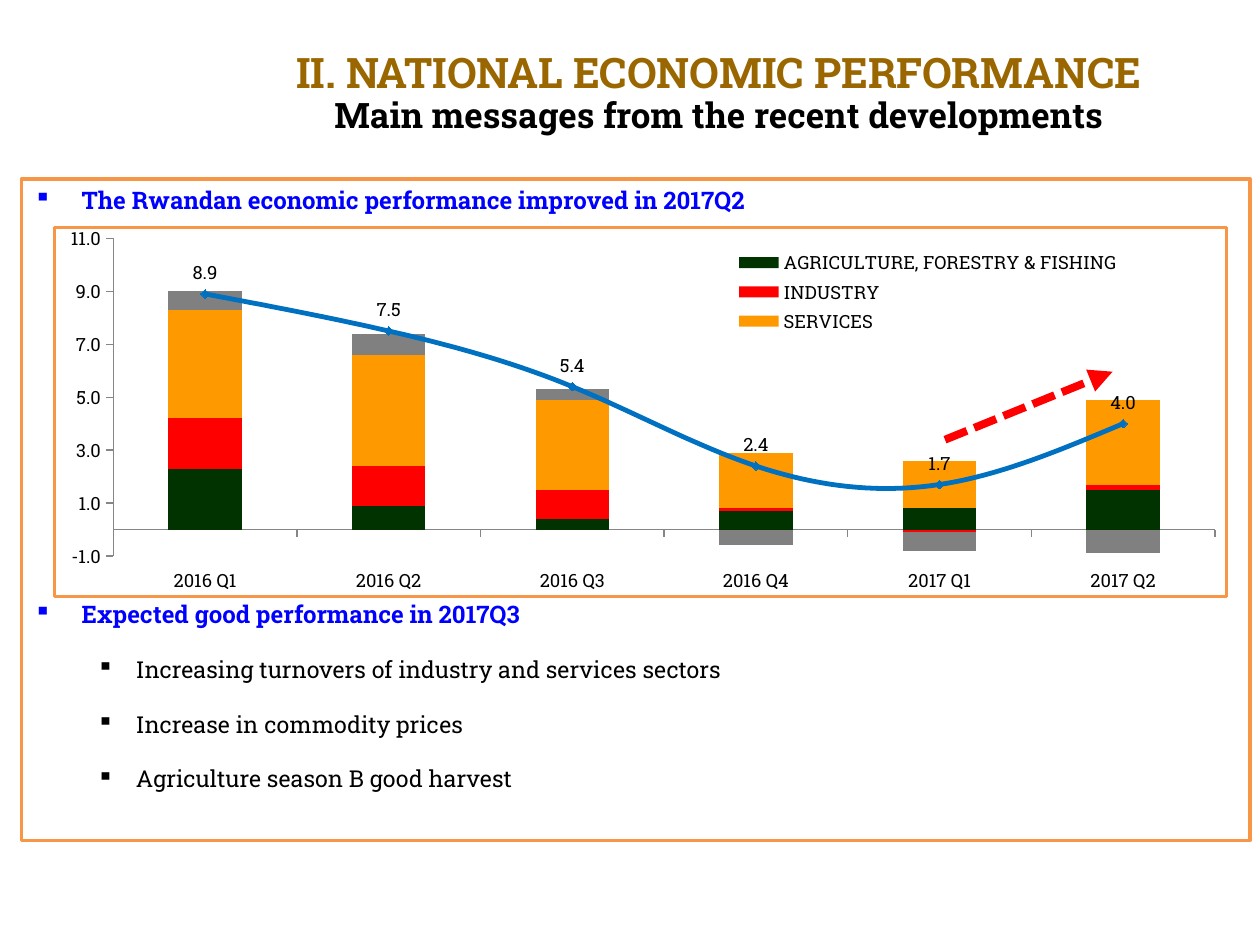
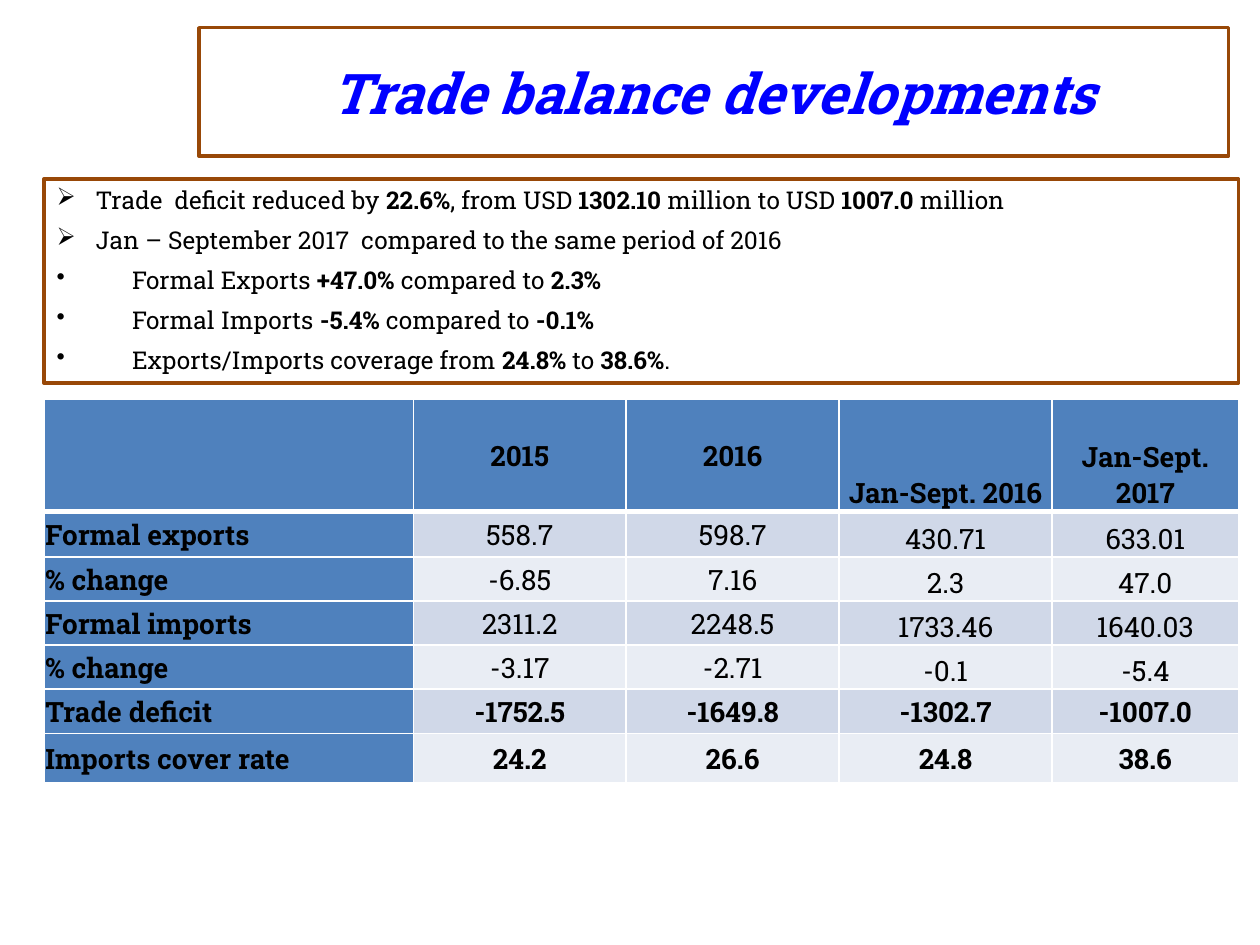
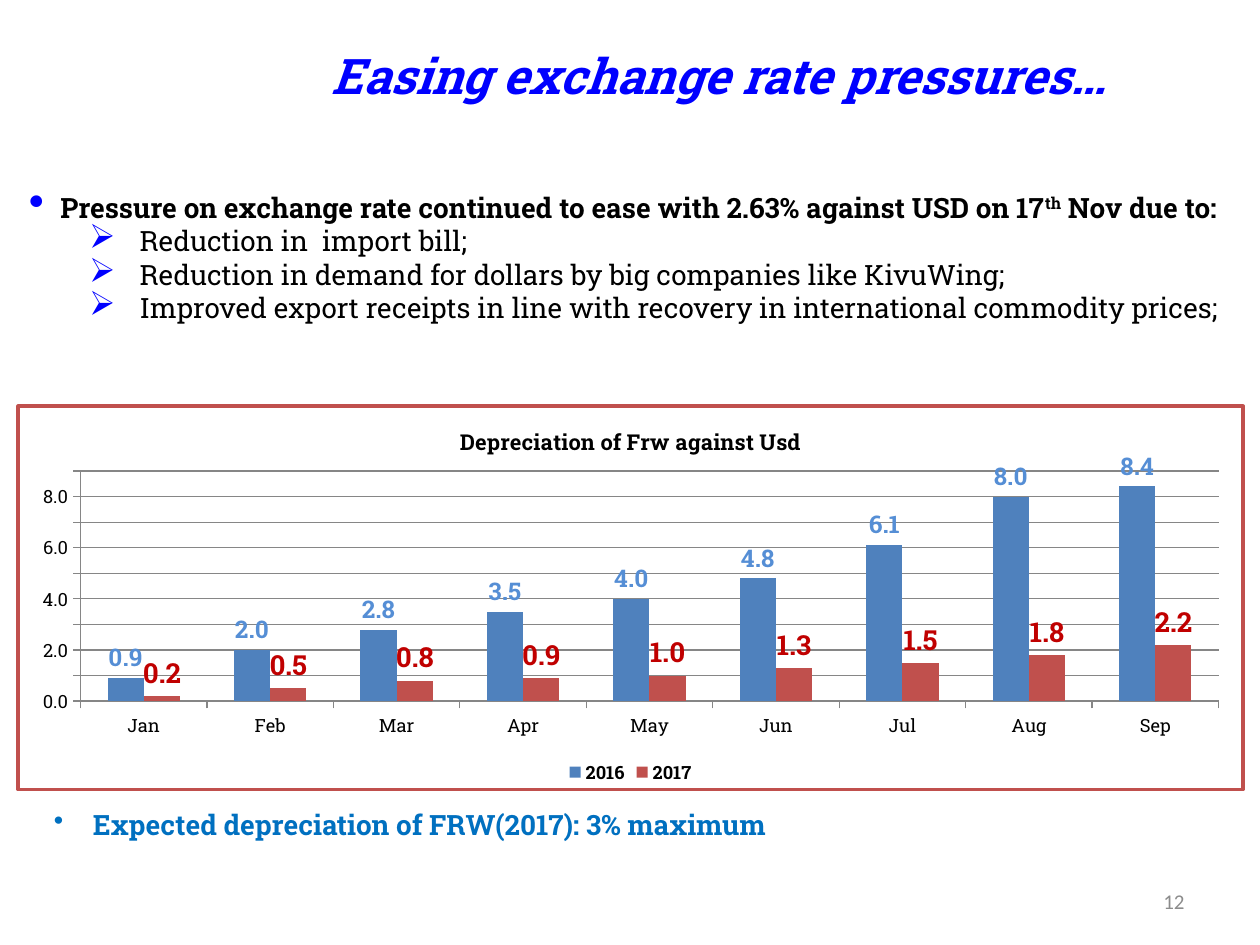
from pptx import Presentation
from pptx.chart.data import CategoryChartData as ChartData
from pptx.dml.color import RGBColor as RGB
from pptx.enum.chart import XL_CHART_TYPE as KIND, XL_LABEL_POSITION as LABEL
from pptx.enum.chart import XL_LEGEND_POSITION as LEGEND, XL_MARKER_STYLE as MARK
from pptx.enum.chart import XL_TICK_LABEL_POSITION as TICKS, XL_TICK_MARK as TICK
from pptx.enum.dml import MSO_LINE as DASH
from pptx.enum.shapes import MSO_CONNECTOR as LINK
from pptx.enum.text import MSO_ANCHOR as ANCHOR, PP_ALIGN as ALIGN
from pptx.oxml import parse_xml
from pptx.oxml.ns import nsdecls, qn
from pptx.util import Inches, Pt
from lxml.etree import SubElement

SLAB = "Roboto Slab"
BLACK, WHITE = RGB(0, 0, 0), RGB(255, 255, 255)
BLUE, SKY, PALE = RGB(0, 0, 255), RGB(0, 0x70, 0xC0), RGB(0x55, 0x8E, 0xD5)
NAVY, STEEL = RGB(0, 0x20, 0x60), RGB(0x4F, 0x81, 0xBD)
BAND, MIST = RGB(0xD0, 0xD8, 0xE8), RGB(0xE9, 0xED, 0xF4)
GOLD, BROWN = RGB(0x99, 0x66, 0), RGB(0x98, 0x48, 0x07)
PEACH, ORANGE = RGB(0xF7, 0x96, 0x46), RGB(0xFF, 0x99, 0)
GREEN, RED = RGB(0, 0x33, 0), RGB(255, 0, 0)
BRICK, CRIMSON = RGB(0xC0, 0x50, 0x4D), RGB(0xC0, 0, 0)
GRAY, AXIS, NUMBER = RGB(0x80, 0x80, 0x80), RGB(0x86, 0x86, 0x86), RGB(0x8C, 0x8C, 0x8C)


# Shared text parts

def style(font, size, color=BLACK, bold=False, italic=False, name=SLAB):
    font.name, font.size, font.bold, font.italic = name, Pt(size), bold, italic
    font.color.rgb = color


def frame(slide, box, fill=None, edge=None, anchor=ANCHOR.TOP):
    """Text box at (left, top, width, height) in inches."""
    shape = slide.shapes.add_textbox(*map(Inches, box))
    if fill is not None:
        shape.fill.solid()
        shape.fill.fore_color.rgb = fill
    if edge is not None:
        shape.line.color.rgb, shape.line.width = edge, Pt(2)
    text = shape.text_frame
    text.word_wrap, text.vertical_anchor = True, anchor
    return text


def bullet(para, char, left, hang, color=None, scale=None):
    props = para._p.get_or_add_pPr()
    props.set("marL", str(Inches(left)))
    props.set("indent", str(-Inches(hang)))
    if color is not None:
        tint = SubElement(props, qn("a:buClr"))
        SubElement(tint, qn("a:srgbClr")).set("val", str(color))
    if scale:
        SubElement(props, qn("a:buSzPct")).set("val", str(scale * 1000))
    SubElement(props, qn("a:buChar")).set("char", char)


def write(text, words, size, color=BLACK, bold=False, italic=False, align=None,
          before=0, after=0, lines=None, mark=None, raised=False, name=SLAB):
    """Add a paragraph; parts between asterisks are bold, or raised."""
    first = text.paragraphs[0]
    para = text.add_paragraph() if first.runs else first
    if mark:
        bullet(para, *mark)
    para.alignment, para.line_spacing = align, lines
    para.space_before, para.space_after = Pt(before), Pt(after)
    style(para.font, size, color, bold, italic, name)
    for i, part in enumerate(words.split("*")):
        run = para.add_run()
        run.text = part
        if i % 2 and raised:
            run._r.get_or_add_rPr().set("baseline", "30000")
        elif i % 2:
            run.font.bold = True


def title(slide, top, height, words, size, color=BLUE, italic=True,
          width=8.25, edge=None):
    text = frame(slide, (1.58, top, width, height), edge=edge, anchor=ANCHOR.MIDDLE)
    write(text, words, size, color, True, italic, ALIGN.CENTER)


# Shared chart parts

def plot(slide, box, kind, cats, rows, edge, form):
    data = ChartData()
    data.categories = cats
    for name, vals, _ in rows:
        data.add_series(name, vals)
    chart = slide.shapes.add_chart(kind, *map(Inches, box), data).chart
    style(chart.font, 10.5)
    chart.element.find(qn("c:chart")).addnext(parse_xml(
        f'<c:spPr {nsdecls("c", "a")}><a:solidFill><a:srgbClr val="{WHITE}"/></a:solidFill>'
        f'<a:ln w="{Pt(2)}"><a:solidFill><a:srgbClr val="{edge}"/></a:solidFill></a:ln>'
        '</c:spPr>'))
    chart.has_title = False
    chart.has_legend = True
    chart.legend.position = LEGEND.BOTTOM
    chart.legend.include_in_layout = False
    bars = chart.plots[0]
    bars.gap_width, bars.vary_by_categories = 150, False
    for series, (_, _, color) in zip(bars.series, rows):
        series.format.fill.solid()
        series.format.fill.fore_color.rgb = color
        series.invert_if_negative = False
    for axis in (chart.category_axis, chart.value_axis):
        axis.major_tick_mark, axis.minor_tick_mark = TICK.OUTSIDE, TICK.NONE
        axis.format.line.color.rgb = AXIS
    ticks = chart.value_axis.tick_labels
    ticks.number_format, ticks.number_format_is_linked = form, False
    return chart


def label(series, form, place, size, color=BLACK, bold=False):
    tags = series.data_labels
    tags.show_value, tags.position = True, place
    tags.number_format, tags.number_format_is_linked = form, False
    style(tags.font, size, color, bold)


def layout(parent, index, x, y, w, h, inner=False):
    for old in parent.findall(qn("c:layout")):
        parent.remove(old)
    target = '<c:layoutTarget val="inner"/>' if inner else ""
    parent.insert(index, parse_xml(
        f'<c:layout {nsdecls("c")}><c:manualLayout>{target}'
        '<c:xMode val="edge"/><c:yMode val="edge"/>'
        f'<c:x val="{x}"/><c:y val="{y}"/><c:w val="{w}"/><c:h val="{h}"/>'
        '</c:manualLayout></c:layout>'))


# Slide 1: growth

def to_line(chart):
    """Turn the last bar series into a line on the same axes."""
    bars = chart.element.xpath(".//c:barChart")[0]
    last = bars.findall(qn("c:ser"))[-1]
    for flag in last.findall(qn("c:invertIfNegative")):
        last.remove(flag)
    line = parse_xml(f'<c:lineChart {nsdecls("c")}><c:grouping val="standard"/>'
                     '<c:varyColors val="0"/><c:marker val="1"/></c:lineChart>')
    line.insert(2, last)
    for axis in bars.findall(qn("c:axId")):
        SubElement(line, qn("c:axId")).set("val", axis.get("val"))
    bars.addnext(line)
    return chart.plots[1].series[0]


def growth(slide, box):
    cats = ["2016 Q1", "2016 Q2", "2016 Q3", "2016 Q4", "2017 Q1", "2017 Q2"]
    rows = [
        ("AGRICULTURE, FORESTRY & FISHING", (2.3, 0.9, 0.4, 0.7, 0.8, 1.5), GREEN),
        ("INDUSTRY", (1.9, 1.5, 1.1, 0.1, -0.1, 0.2), RED),
        ("SERVICES", (4.1, 4.2, 3.4, 2.1, 1.8, 3.2), ORANGE),
        ("", (0.7, 0.8, 0.4, -0.6, -0.7, -0.9), GRAY),
        ("", (8.9, 7.5, 5.4, 2.4, 1.7, 4), SKY)]
    chart = plot(slide, box, KIND.COLUMN_STACKED, cats, rows, PEACH, "#,##0.0")
    chart.plots[0].overlap = 100
    chart.category_axis.tick_label_position = TICKS.LOW
    axis = chart.value_axis
    axis.has_major_gridlines = False
    axis.minimum_scale, axis.maximum_scale, axis.major_unit = -1, 11, 2

    # Total as a smooth line
    total = to_line(chart)
    total.smooth = True
    total.format.fill.background()
    total.format.line.color.rgb, total.format.line.width = SKY, Pt(2.75)
    total.marker.style, total.marker.size = MARK.DIAMOND, 5
    total.marker.format.fill.solid()
    total.marker.format.fill.fore_color.rgb = NAVY
    label(total, "#,##0.0", LABEL.ABOVE, 10.5)

    # Legend with the three named sectors only
    style(chart.legend.font, 10.5)
    key = chart.element.xpath(".//c:legend")[0]
    for i, item in enumerate((3, 4), 1):
        key.insert(i, parse_xml(f'<c:legendEntry {nsdecls("c")}><c:idx val="{item}"/>'
                                '<c:delete val="1"/></c:legendEntry>'))
    layout(key, 3, 0.56, 0.05, 0.37, 0.25)
    layout(chart.element.xpath(".//c:plotArea")[0], 0, 0.05, 0.03, 0.94, 0.86, True)


def arrow(slide, start, end):
    link = slide.shapes.add_connector(LINK.STRAIGHT, *map(Inches, start + end))
    link.line.color.rgb, link.line.width = RED, Pt(4.5)
    link.line.dash_style = DASH.SQUARE_DOT
    props = link.element.spPr
    SubElement(props.find(qn("a:ln")), qn("a:tailEnd")).set("type", "triangle")
    SubElement(props, qn("a:effectLst"))


def economy(slide):
    title(slide, 0.7, 0.42, "Main messages from the recent developments", 20, BLACK, False)
    body = frame(slide, (0.17, 1.42, 9.75, 5.25), WHITE, PEACH)
    main, sub = ("▪", 0.38, 0.38), ("▪", 0.81, 0.31)
    write(body, "The Rwandan economic performance improved in 2017Q2", 13.8, BLUE, True,
          mark=main)
    write(body, "Expected good performance in 2017Q3", 13.8, BLUE, True, before=220,
          mark=main)
    for words in ("Increasing turnovers of industry and services sectors",
                  "Increase in commodity prices",
                  "Agriculture season B good harvest"):
        write(body, words, 13.3, before=15.4, mark=sub)
    head = frame(slide, (1.58, 0.12, 8.25, 0.71))
    write(head, "II. NATIONAL ECONOMIC PERFORMANCE", 24, GOLD, True,
          align=ALIGN.CENTER, lines=1.5)
    growth(slide, (0.42, 1.79, 9.33, 2.96))
    arrow(slide, (7.5, 3.49), (8.83, 2.95))


# Slide 2: trade

def rule(cell, side, width):
    """White border on one side of a cell, set before its fill."""
    line = SubElement(cell._tc.get_or_add_tcPr(), qn(f"a:ln{side}"))
    line.set("w", str(Pt(width)))
    fill = SubElement(line, qn("a:solidFill"))
    SubElement(fill, qn("a:srgbClr")).set("val", str(WHITE))


def grid(slide, box):
    rows = [
        ("", "2015", "2016", "Jan-Sept. 2016", "Jan-Sept. 2017"),
        ("Formal exports", "558.7", "598.7", "430.71", "633.01"),
        ("% change", "-6.85", "7.16", "2.3", "47.0"),
        ("Formal imports", "2311.2", "2248.5", "1733.46", "1640.03"),
        ("% change", "-3.17", "-2.71", "-0.1", "-5.4"),
        ("Trade deficit", "-1752.5", "-1649.8", "-1302.7", "-1007.0"),
        ("Imports cover rate", "24.2", "26.6", "24.8", "38.6")]
    table = slide.shapes.add_table(7, 5, *map(Inches, box)).table
    table.first_col = True
    for col, width in zip(table.columns, (2.93, 1.69, 1.69, 1.69, 1.48)):
        col.width = Inches(width)
    for row, height in zip(table.rows, (0.89, 0.36, 0.35, 0.35, 0.35, 0.35, 0.39)):
        row.height = Inches(height)
    for r, row in enumerate(rows):
        for c, words in enumerate(row):
            cell = table.cell(r, c)
            head = r == 0 or c == 0
            for side in "LRTB":
                thick = (r, side) in ((0, "B"), (1, "T"))
                rule(cell, side, 3 if thick else 1)
            cell.fill.solid()
            cell.fill.fore_color.rgb = STEEL if head else BAND if r % 2 else MIST
            cell.margin_left = cell.margin_right = cell.margin_top = Inches(0.01)
            cell.margin_bottom = 0
            cell.vertical_anchor = ANCHOR.BOTTOM if c > 2 and r < 5 else ANCHOR.MIDDLE
            write(cell.text_frame, words, 16, bold=head or r > 4,
                  align=ALIGN.CENTER if c else ALIGN.LEFT)


def trade(slide):
    title(slide, 0.22, 1.02, "Trade balance developments", 32, width=8.17, edge=BROWN)
    notes = frame(slide, (0.35, 1.42, 9.48, 1.62), WHITE, BROWN)
    main, sub = ("➢", 0.31, 0.31), ("•", 0.6, 0.6)
    for words, mark in (
            ("Trade  deficit reduced by *22.6%*, from USD *1302.10* million"
             " to USD *1007.0* million", main),
            ("Jan – September 2017  compared to the same period of 2016", main),
            ("Formal Exports *+47.0%* compared to *2.3%*", sub),
            ("Formal Imports *-5.4%* compared to *-0.1%*", sub),
            ("Exports/Imports coverage from *24.8%* to *38.6%*.", sub)):
        write(notes, words, 14, align=ALIGN.JUSTIFY, after=6, mark=mark)
    grid(slide, (0.35, 3.17, 9.48, 3.04))


# Slide 3: exchange rate

def rates(slide, box):
    cats = ["Jan", "Feb", "Mar", "Apr", "May", "Jun", "Jul", "Aug", "Sep"]
    rows = [("2016", (0.9, 2, 2.8, 3.5, 4, 4.8, 6.1, 8, 8.4), STEEL),
            ("2017", (0.2, 0.5, 0.8, 0.9, 1, 1.3, 1.5, 1.8, 2.2), BRICK)]
    chart = plot(slide, box, KIND.COLUMN_CLUSTERED, cats, rows, BRICK, "0.0")
    chart.has_title = True
    write(chart.chart_title.text_frame, "Depreciation of Frw against Usd", 12.6, bold=True)
    chart.plots[0].overlap = 0
    style(chart.legend.font, 10.5, bold=True)
    axis = chart.value_axis
    axis.minimum_scale, axis.maximum_scale, axis.major_unit = 0, 9, 1
    axis.has_major_gridlines = True
    axis.major_gridlines.format.line.color.rgb = AXIS
    for series, size, color in zip(chart.plots[0].series, (14, 16), (PALE, CRIMSON)):
        label(series, "0.0", LABEL.OUTSIDE_END, size, color, True)


def exchange(slide):
    page = frame(slide, (7.17, 6.95, 2.33, 0.4), anchor=ANCHOR.MIDDLE)
    write(page, "12", 12, NUMBER, align=ALIGN.RIGHT, name="Calibri")
    notes = frame(slide, (0.13, 1.46, 9.75, 1.72), WHITE)
    write(notes, "Pressure on exchange rate continued to ease with 2.63% against USD"
          " on 17*th* Nov due to:", 16, bold=True, align=ALIGN.JUSTIFY,
          mark=("•", 0.25, 0.25, BLUE, 160), raised=True)
    for words in ("Reduction in  import bill;",
                  "Reduction in demand for dollars by big companies like KivuWing;",
                  "Improved export receipts in line with recovery in international"
                  " commodity prices;"):
        write(notes, words, 16, align=ALIGN.JUSTIFY, mark=("➢", 0.88, 0.4, BLUE, 120))
    last = frame(slide, (0.33, 6.36, 9.34, 0.37))
    write(last, "Expected depreciation of FRW(2017): 3% maximum", 16, SKY, True,
          align=ALIGN.JUSTIFY, mark=("•", 0.31, 0.31))
    rates(slide, (0.13, 3.21, 9.75, 3.07))
    title(slide, 0.18, 0.83, "Easing exchange rate pressures…", 28)


def main():
    deck = Presentation()
    deck.slide_width, deck.slide_height = Inches(10), Inches(7.5)
    for build in (economy, trade, exchange):
        build(deck.slides.add_slide(deck.slide_layouts[6]))
    deck.save("out.pptx")


if __name__ == "__main__":
    main()
